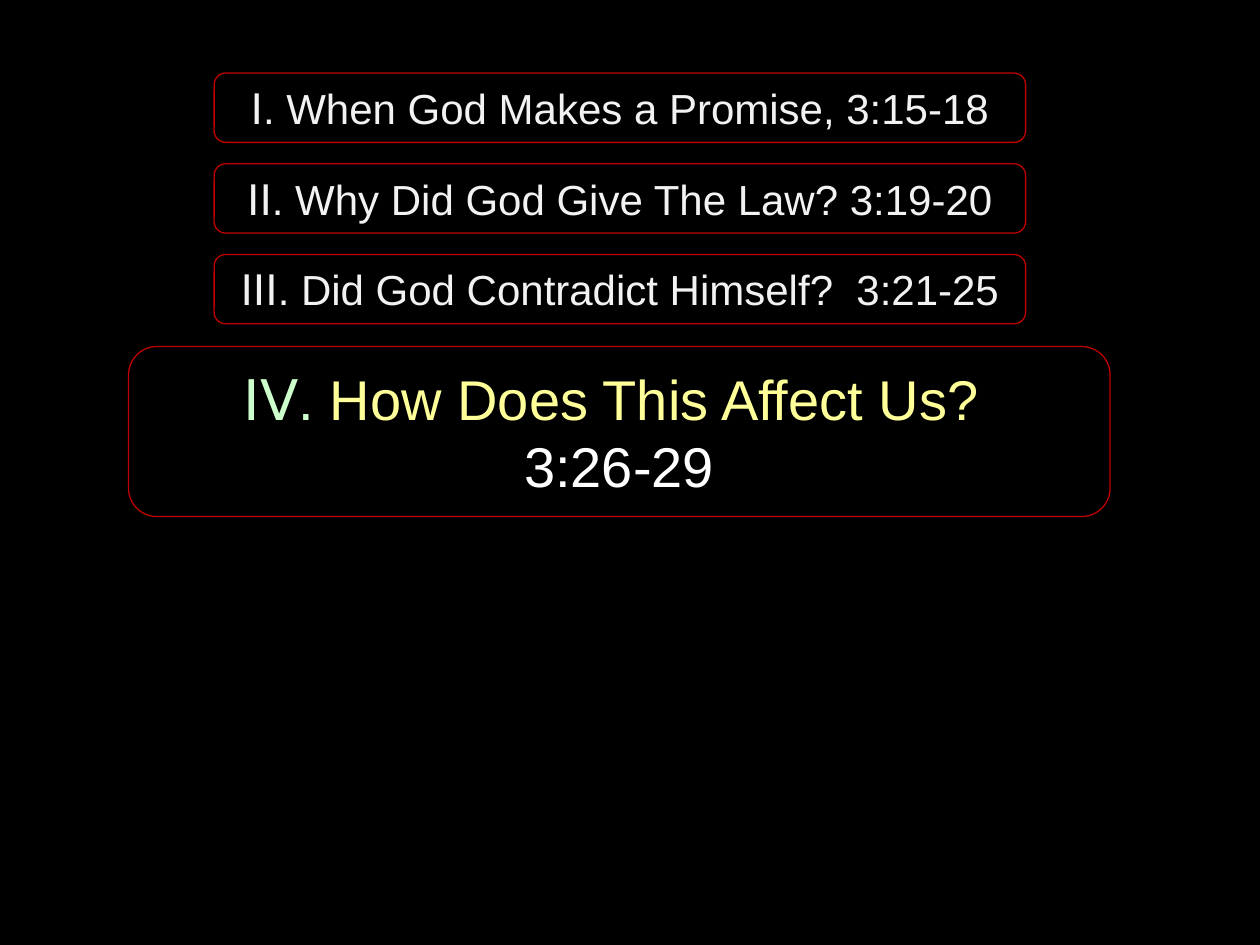
import pptx
import pptx.util
import pptx.dml.color
import pptx.enum.shapes
import pptx.enum.text

Inches = pptx.util.Inches
RGBColor = pptx.dml.color.RGBColor

BLACK = RGBColor(0x00, 0x00, 0x00)
RED = RGBColor(0xC0, 0x00, 0x00)
LIGHT_GRAY = RGBColor(0xF2, 0xF2, 0xF2)
MINT = RGBColor(0xCC, 0xFF, 0xCC)
YELLOW = RGBColor(0xFF, 0xFF, 0x99)
WHITE = RGBColor(0xFF, 0xFF, 0xFF)

NUMERAL_FONT = "DejaVu Sans"
BODY_FONT = "Arial"

EARLIER_POINTS = [
    ("I", ". When God Makes a Promise, 3:15-18"),
    ("II", ". Why Did God Give The Law? 3:19-20"),
    ("III", ". Did God Contradict Himself?  3:21-25"),
]


def add_point_box(slide, left, top, width, height, size):
    shape = slide.shapes.add_shape(
        pptx.enum.shapes.MSO_SHAPE.ROUNDED_RECTANGLE, left, top, width, height
    )
    shape.shadow.inherit = False
    shape.fill.solid()
    shape.fill.fore_color.rgb = BLACK
    shape.line.color.rgb = RED
    shape.line.width = pptx.util.Pt(0.75)
    shape.text_frame.word_wrap = True
    shape.text_frame.vertical_anchor = pptx.enum.text.MSO_ANCHOR.MIDDLE
    paragraph = shape.text_frame.paragraphs[0]
    paragraph.alignment = pptx.enum.text.PP_ALIGN.CENTER
    paragraph.font.size = pptx.util.Pt(size)
    return paragraph


def add_text(paragraph, text, color, font_name=BODY_FONT):
    run = paragraph.add_run()
    run.text = text
    run.font.name = font_name
    run.font.size = paragraph.font.size
    run.font.color.rgb = color


def add_earlier_points(slide, left, top, width, height, pitch):
    for index, (numeral, title) in enumerate(EARLIER_POINTS):
        paragraph = add_point_box(slide, left, top + index * pitch, width, height, 24)
        add_text(paragraph, numeral, LIGHT_GRAY, NUMERAL_FONT)
        add_text(paragraph, title, LIGHT_GRAY)


def add_current_point(slide, left, top, width, height):
    paragraph = add_point_box(slide, left, top, width, height, 32)
    add_text(paragraph, "IV", MINT, NUMERAL_FONT)
    add_text(paragraph, ". ", MINT)
    add_text(paragraph, "How Does This Affect Us? ", YELLOW)
    paragraph.add_line_break()
    add_text(paragraph, "3:26-29", WHITE)


def main():
    presentation = pptx.Presentation()
    presentation.slide_width = Inches(10)
    presentation.slide_height = Inches(7.5)
    slide = presentation.slides.add_slide(presentation.slide_layouts[6])
    slide.background.fill.solid()
    slide.background.fill.fore_color.rgb = BLACK
    add_earlier_points(
        slide, Inches(1.7), Inches(0.58), Inches(6.44), Inches(0.55), Inches(0.72)
    )
    add_current_point(slide, Inches(1.02), Inches(2.75), Inches(7.79), Inches(1.35))
    presentation.save("out.pptx")


if __name__ == "__main__":
    main()
